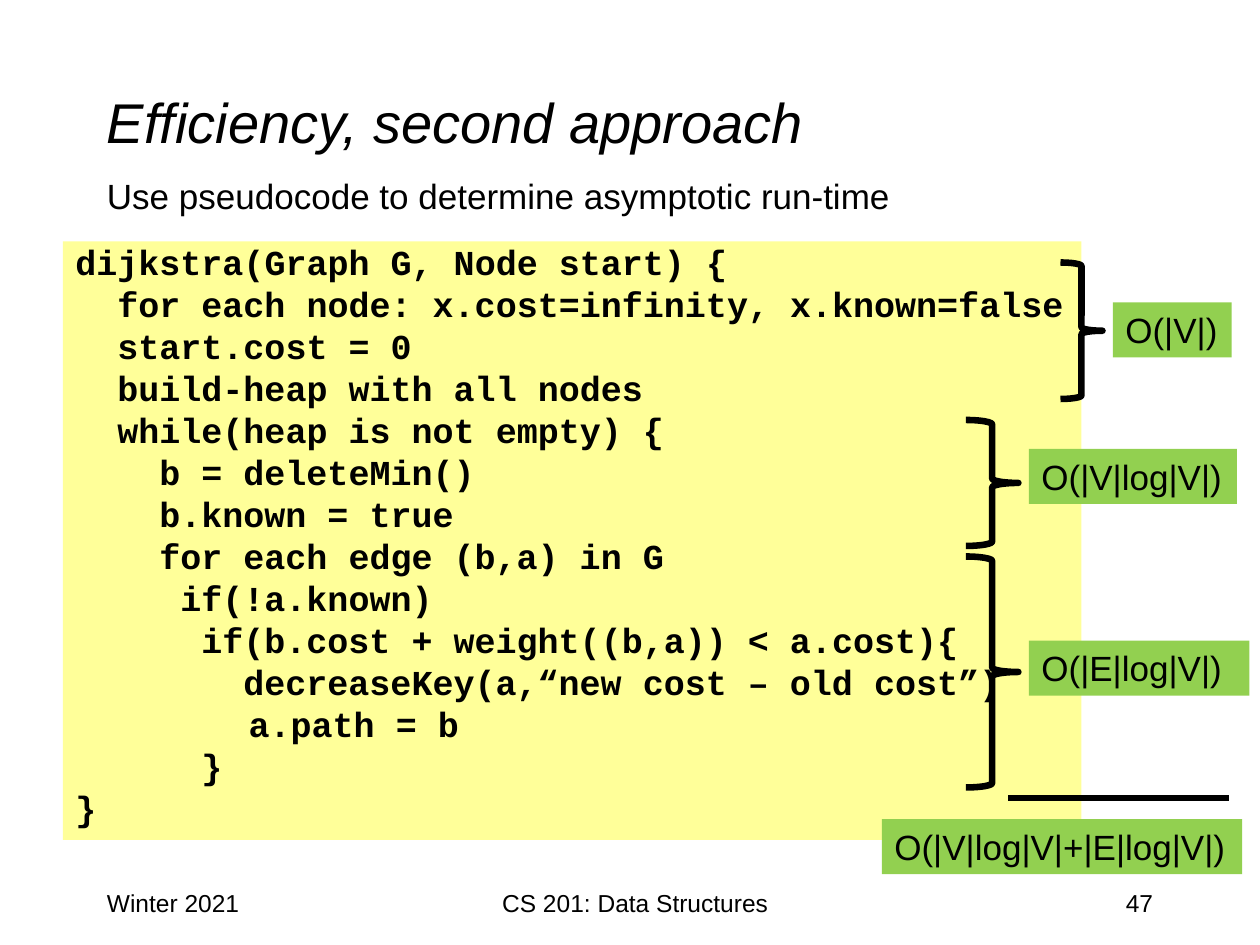
from pptx import Presentation
from pptx.dml.color import RGBColor
from pptx.enum.shapes import MSO_CONNECTOR, MSO_SHAPE as Shape
from pptx.enum.text import MSO_ANCHOR as Anchor, PP_ALIGN as Align
from pptx.oxml import parse_xml
from pptx.oxml.ns import nsdecls
from pptx.util import Inches, Pt

BLACK = RGBColor(0x00, 0x00, 0x00)
YELLOW = RGBColor(0xFF, 0xFF, 0x99)
GREEN = RGBColor(0x92, 0xD0, 0x50)

GRID = Inches(1) / 12
CODE_COLUMN = 12
BRACE_WIDTH = 3.75
LABEL_HEIGHT = 5.25

TITLE = "Efficiency, second approach"
SUBTITLE = "Use pseudocode to determine asymptotic run-time"
CODE = [
    (0, "dijkstra(Graph G, Node start) {"),
    (2, "for each node: x.cost=infinity, x.known=false"),
    (2, "start.cost = 0"),
    (2, "build-heap with all nodes"),
    (2, "while(heap is not empty) {"),
    (4, "b = deleteMin()"),
    (4, "b.known = true"),
    (4, "for each edge (b,a) in G"),
    (5, "if(!a.known)"),
    (6, "if(b.cost + weight((b,a)) < a.cost){"),
    (8, "decreaseKey(a,“new cost – old cost”)"),
    (8.25, "a.path = b"),
    (6, "}"),
    (0, "}"),
]
FOOTER = [
    ("Winter 2021", 9, 25, Align.LEFT),
    ("CS 201: Data Structures", 38, 45, Align.CENTER),
    ("47", 86, 25, Align.RIGHT),
]
COSTS = [
    ("O(|V|)", 106, 28.8, 11.3, True),
    ("O(|V|log|V|)", 98, 42.75, 19.8, False),
    ("O(|E|log|V|)", 98, 61, 21, True),
    ("O(|V|log|V|+|E|log|V|)", 84, 78, 34.3, False),
]
BRACES = [(101, 25, 4, 13), (92, 40, 5, 12), (92, 53, 5, 22)]
SUM_LINE = (96, 76, 117, 76)

prs = Presentation()
prs.slide_width, prs.slide_height = Inches(10), Inches(7.5)
slide = prs.slides.add_slide(prs.slide_layouts[6])
shapes = slide.shapes


def on_grid(cells):
    return [round(cell * GRID) for cell in cells]


def add_text(lines, cells, fill=None, font="Arial", size=20, bold=False,
             italic=False, align=Align.LEFT, anchor=Anchor.TOP, wrap=True,
             before=0, spacing=None):
    if fill is None:
        box = shapes.add_textbox(*on_grid(cells))
    else:
        box = shapes.add_shape(Shape.RECTANGLE, *on_grid(cells))
        box.shadow.inherit = False
        box.fill.solid()
        box.fill.fore_color.rgb = fill
        box.line.fill.background()
    frame = box.text_frame
    frame.word_wrap = wrap
    frame.vertical_anchor = anchor
    for number, (indent, text) in enumerate(lines):
        paragraph = frame.add_paragraph() if number else frame.paragraphs[0]
        paragraph.alignment = align
        paragraph.space_before = Pt(before)
        paragraph.line_spacing = spacing
        if indent:
            properties = paragraph._p.get_or_add_pPr()
            properties.set("marL", str(Pt(indent * CODE_COLUMN)))
            properties.set("indent", "0")
        run = paragraph.add_run()
        run.text = text
        run.font.name, run.font.size = font, Pt(size)
        run.font.bold, run.font.italic = bold, italic
        run.font.color.rgb = BLACK


def set_stroke(item):
    item.line.color.rgb = BLACK
    item.line.width = Pt(BRACE_WIDTH)


add_text([(0, TITLE)], (9, 4, 102, 15), size=32, italic=True,
         anchor=Anchor.MIDDLE)
add_text([(0, SUBTITLE)], (9, 16, 102, 5), before=4)
for text, left, width, align in FOOTER:
    add_text([(0, text)], (left, 84, width, 6), size=14, align=align)

add_text(CODE, (6, 23, 97, 57), fill=YELLOW, font="Courier New", bold=True,
         before=4, spacing=Pt(20))

for cells in BRACES:
    brace = shapes.add_shape(Shape.RIGHT_BRACE, *on_grid(cells))
    brace.shadow.inherit = False
    brace.fill.background()
    set_stroke(brace)

for cost, left, top, width, wrap in COSTS:
    add_text([(0, cost)], (left, top, width, LABEL_HEIGHT), fill=GREEN,
             wrap=wrap)

sum_line = shapes.add_connector(MSO_CONNECTOR.STRAIGHT, *on_grid(SUM_LINE))
set_stroke(sum_line)
sum_line._element.spPr.append(parse_xml(f"<a:effectLst {nsdecls('a')}/>"))

prs.save("out.pptx")
